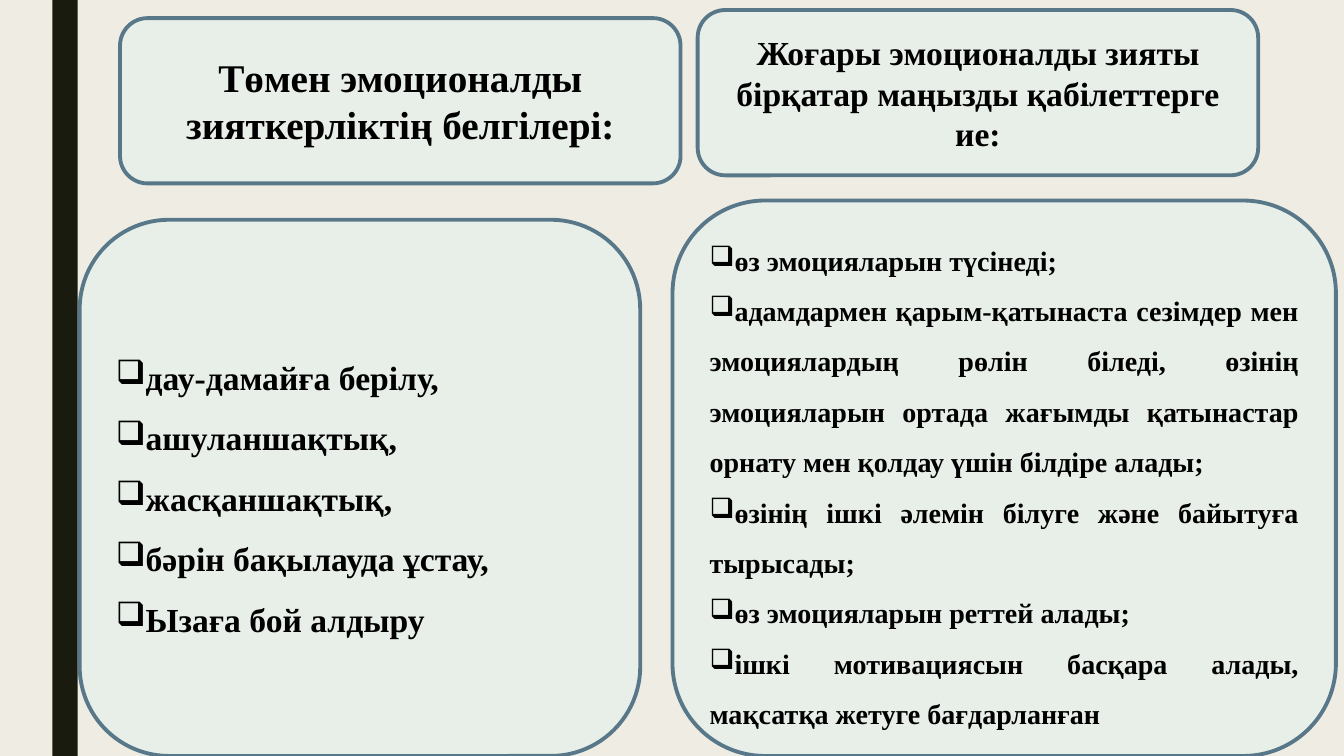
"""Build a slide contrasting low and high emotional intelligence."""
import dataclasses

import pptx
import pptx.dml.color
import pptx.enum.shapes
import pptx.enum.text
import pptx.util
from lxml import etree

ALIGN = pptx.enum.text.PP_ALIGN
SHAPES = pptx.enum.shapes.MSO_SHAPE


@dataclasses.dataclass(frozen=True)
class Theme:
    """Colours, font and type sizes of the slide."""
    paper: str = "EFEDE3"
    stripe: str = "191B0E"
    panel: str = "E8EEE8"
    outline: str = "58788A"
    ink: str = "000000"
    font: str = "Times New Roman"
    large: int = 28
    medium: int = 24
    small: int = 20
    outline_width: float = 2.75
    list_spacing: float = 1.5
    bullet: str = "❑"
    bullet_indent: float = -0.38


THEME = Theme()
SLIDE_WIDTH, SLIDE_HEIGHT = 13.33, 7.5

# Shares are percentages of the slide: left, top, width, height.
STRIPE_SHARE = (3.9, 0, 1.88, 100)
CARD_WIDTH, HEADING_HEIGHT = 41.71, 21.87

TOPICS = [
    {
        "heading": "Төмен эмоционалды зияткерліктің белгілері:",
        "heading_corner": (8.93, 2.4),
        "heading_size": THEME.large,
        "traits": [
            "дау-дамайға берілу,",
            "ашуланшақтық,",
            "жасқаншақтық,",
            "бәрін бақылауда ұстау,",
            "Ызаға бой алдыру",
        ],
        "traits_corner": (5.93, 29.07),
        "traits_width": CARD_WIDTH,
        "traits_size": THEME.medium,
        "traits_align": ALIGN.LEFT,
    },
    {
        "heading": "Жоғары эмоционалды зияты бірқатар маңызды қабілеттерге ие:",
        "heading_corner": (51.91, 1.33),
        "heading_size": THEME.medium,
        "traits": [
            "өз эмоцияларын түсінеді;",
            "адамдармен қарым-қатынаста сезімдер мен эмоциялардың рөлін біледі, "
            "өзінің эмоцияларын ортада жағымды қатынастар орнату мен қолдау үшін "
            "білдіре алады;",
            "өзінің ішкі әлемін білуге және байытуға тырысады;",
            "өз эмоцияларын реттей алады;",
            "ішкі мотивациясын басқара алады, мақсатқа жетуге бағдарланған",
        ],
        "traits_corner": (50.04, 26.53),
        "traits_width": 49.36,
        "traits_size": THEME.small,
        "traits_align": ALIGN.JUSTIFY,
    },
]


def rgb(code):
    return pptx.dml.color.RGBColor.from_string(code)


def add_block(slide, preset, share, fill):
    left, top, width, height = share
    block = slide.shapes.add_shape(
        preset,
        pptx.util.Inches(SLIDE_WIDTH * left / 100),
        pptx.util.Inches(SLIDE_HEIGHT * top / 100),
        pptx.util.Inches(SLIDE_WIDTH * width / 100),
        pptx.util.Inches(SLIDE_HEIGHT * height / 100),
    )
    block.shadow.inherit = False
    block.fill.solid()
    block.fill.fore_color.rgb = rgb(fill)
    return block


def add_bullet(paragraph):
    properties = paragraph._p.get_or_add_pPr()
    properties.set("marL", "0")
    properties.set("indent", str(int(pptx.util.Inches(THEME.bullet_indent))))
    bullet = etree.SubElement(properties, pptx.oxml.ns.qn("a:buChar"))
    bullet.set("char", THEME.bullet)


def add_card(slide, share, lines, size, align, bulleted=False):
    card = add_block(slide, SHAPES.ROUNDED_RECTANGLE, share, THEME.panel)
    card.line.color.rgb = rgb(THEME.outline)
    card.line.width = pptx.util.Pt(THEME.outline_width)
    frame = card.text_frame
    frame.word_wrap = True
    frame.vertical_anchor = pptx.enum.text.MSO_ANCHOR.MIDDLE
    frame.text = "\n".join(lines)
    for paragraph in frame.paragraphs:
        paragraph.alignment = align
        if bulleted:
            paragraph.line_spacing = THEME.list_spacing
            add_bullet(paragraph)
        for run in paragraph.runs:
            run.font.name = THEME.font
            run.font.size = pptx.util.Pt(size)
            run.font.bold = True
            run.font.color.rgb = rgb(THEME.ink)


def main():
    deck = pptx.Presentation()
    deck.slide_width = pptx.util.Inches(SLIDE_WIDTH)
    deck.slide_height = pptx.util.Inches(SLIDE_HEIGHT)
    slide = deck.slides.add_slide(deck.slide_layouts.get_by_name("Blank"))
    slide.background.fill.solid()
    slide.background.fill.fore_color.rgb = rgb(THEME.paper)

    stripe = add_block(slide, SHAPES.RECTANGLE, STRIPE_SHARE, THEME.stripe)
    stripe.line.fill.background()

    for topic in TOPICS:
        left, top = topic["traits_corner"]
        traits_share = (left, top, topic["traits_width"], 100 - top)
        add_card(slide, traits_share, topic["traits"], topic["traits_size"],
                 topic["traits_align"], bulleted=True)
        heading_share = (*topic["heading_corner"], CARD_WIDTH, HEADING_HEIGHT)
        add_card(slide, heading_share, [topic["heading"]],
                 topic["heading_size"], ALIGN.CENTER)

    deck.save("out.pptx")


if __name__ == "__main__":
    main()
